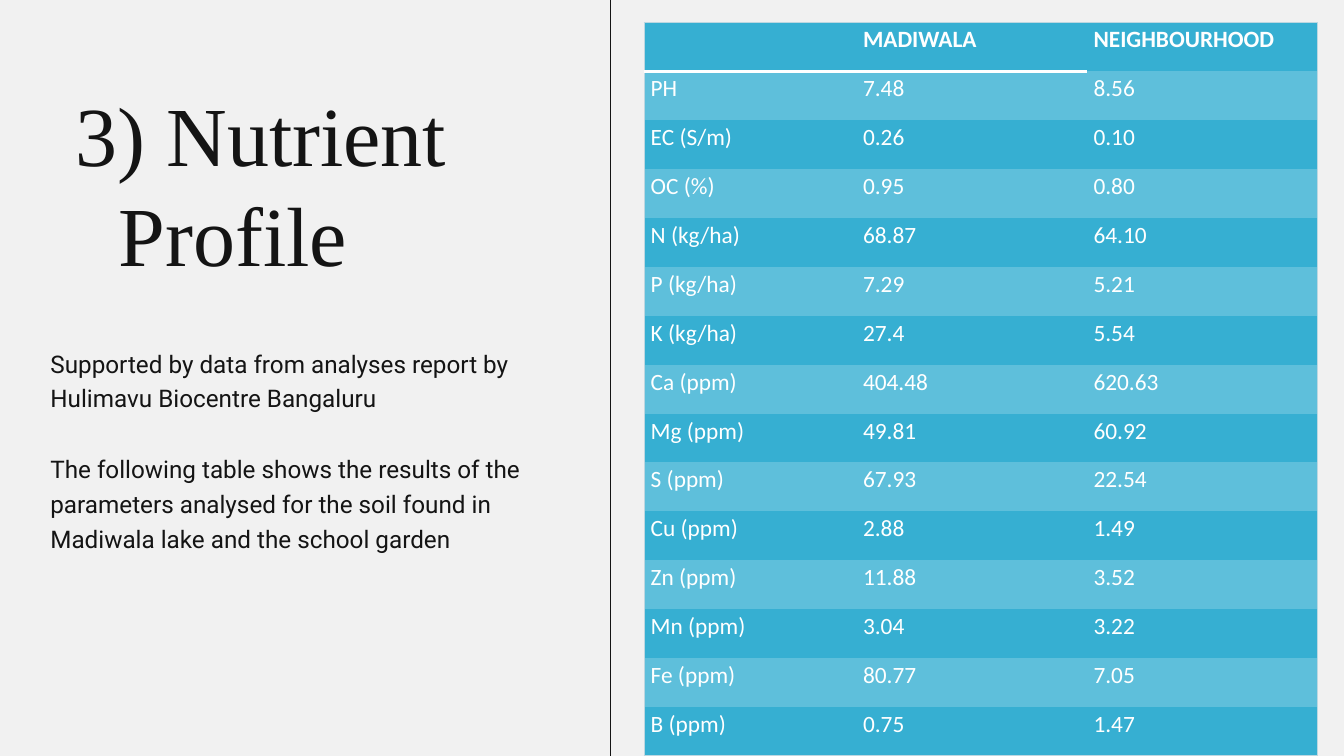
from lxml.etree import SubElement
from pptx import Presentation
from pptx.dml.color import RGBColor
from pptx.enum.shapes import MSO_CONNECTOR
from pptx.enum.text import MSO_ANCHOR, PP_ALIGN
from pptx.oxml.ns import qn
from pptx.util import Pt

COLORS = {
    "background": "F1F1F1",
    "ink": "141414",
    "row": "36AFD2",
    "band": "5EBFDB",
    "edge": "BCD7E1",
    "white": "FFFFFF",
}
NO_STYLE = "{2D5ABB26-0587-4C30-8999-92F81FD0307C}"

NUTRIENTS = [
    ("", "MADIWALA", "NEIGHBOURHOOD"),
    ("PH", "7.48", "8.56"),
    ("EC (S/m)", "0.26", "0.10"),
    ("OC (%)", "0.95", "0.80"),
    ("N (kg/ha)", "68.87", "64.10"),
    ("P (kg/ha)", "7.29", "5.21"),
    ("K (kg/ha)", "27.4", "5.54"),
    ("Ca (ppm)", "404.48", "620.63"),
    ("Mg (ppm)", "49.81", "60.92"),
    ("S (ppm)", "67.93", "22.54"),
    ("Cu (ppm)", "2.88", "1.49"),
    ("Zn (ppm)", "11.88", "3.52"),
    ("Mn (ppm)", "3.04", "3.22"),
    ("Fe (ppm)", "80.77", "7.05"),
    ("B (ppm)", "0.75", "1.47"),
]


def rgb(name):
    return RGBColor.from_string(COLORS[name])


def write(p, text, font, size, color, bold=False):
    r = p.add_run()
    r.text = text
    r.font.name = font
    r.font.size = Pt(size)
    r.font.bold = bold
    r.font.color.rgb = rgb(color)


def fill_text(sp, box, text, font, size, spacing):
    sp.left, sp.top, sp.width, sp.height = (Pt(v) for v in box)
    tf = sp.text_frame
    tf.word_wrap = True
    tf.vertical_anchor = MSO_ANCHOR.TOP
    tf.margin_left = tf.margin_right = tf.margin_top = tf.margin_bottom = 0
    p = tf.paragraphs[0]
    p.alignment = PP_ALIGN.LEFT
    p.line_spacing = Pt(spacing)
    p.space_before = Pt(0)
    write(p, text, font, size, "ink")
    return p


def add_title(slide, box):
    p = fill_text(slide.shapes.title, box, "3) Nutrient Profile", "Times New Roman", 90, 108)
    hanging = Pt(46)
    pPr = p._p.get_or_add_pPr()
    pPr.set("marL", str(hanging))
    pPr.set("indent", str(-hanging))


def add_notes_column(slide, left, top, width):
    notes = [
        (0, 70, 36.4, "Supported by data from analyses report by Hulimavu Biocentre Bangaluru"),
        (112, 109, 37.2, "The following table shows the results of the parameters analysed "
                         "for the soil found in Madiwala lake and the school garden"),
    ]
    for offset, height, spacing, text in notes:
        sp = slide.shapes.add_textbox(0, 0, 0, 0)
        fill_text(sp, (left, top + offset, width, height), text, "Roboto", 26, spacing)


def add_divider(slide, x, height):
    line = slide.shapes.add_connector(MSO_CONNECTOR.STRAIGHT, Pt(x), Pt(height), Pt(x), 0)
    line.line.color.rgb = rgb("ink")
    line.line.width = Pt(1.5)
    SubElement(line._element.spPr, qn("a:effectLst"))


def add_border(cell, side, color, width):
    ln = SubElement(cell._tc.get_or_add_tcPr(), qn("a:ln" + side), w=str(Pt(width)))
    solid = SubElement(ln, qn("a:solidFill"))
    SubElement(solid, qn("a:srgbClr"), val=COLORS[color])


def add_nutrient_table(slide, left, top, widths, height):
    last_row, last_col = len(NUTRIENTS) - 1, len(widths) - 1
    frame = slide.shapes.add_table(
        len(NUTRIENTS), len(widths), Pt(left), Pt(top), Pt(sum(widths)), Pt(height))
    table = frame.table
    table._tbl.tblPr.find(qn("a:tableStyleId")).text = NO_STYLE
    for column, width in zip(table.columns, widths):
        column.width = Pt(width)
    for i, values in enumerate(NUTRIENTS):
        table.rows[i].height = Pt(height / len(NUTRIENTS))
        for j, value in enumerate(values):
            cell = table.cell(i, j)
            if j == 0:
                add_border(cell, "L", "edge", 0.75)
            if j == last_col:
                add_border(cell, "R", "edge", 0.75)
            if i == 0:
                add_border(cell, "T", "edge", 0.75)
                if j < last_col:
                    add_border(cell, "B", "white", 3)
            if i == last_row:
                add_border(cell, "B", "edge", 0.75)
            cell.fill.solid()
            cell.fill.fore_color.rgb = rgb("band" if i % 2 else "row")
            if value:
                p = cell.text_frame.paragraphs[0]
                write(p, value, "Calibri", 25, "white", bold=i == 0)


def main():
    prs = Presentation()
    prs.slide_width, prs.slide_height = Pt(1440), Pt(810)
    slide = prs.slides.add_slide(prs.slide_layouts[5])
    slide.background.fill.solid()
    slide.background.fill.fore_color.rgb = rgb("background")
    add_title(slide, (81, 88, 554, 218))
    add_notes_column(slide, 54, 369, 554)
    add_divider(slide, 654, 810)
    add_nutrient_table(slide, 690, 24, (227.5, 247, 247), 786)
    prs.save("out.pptx")


if __name__ == "__main__":
    main()
